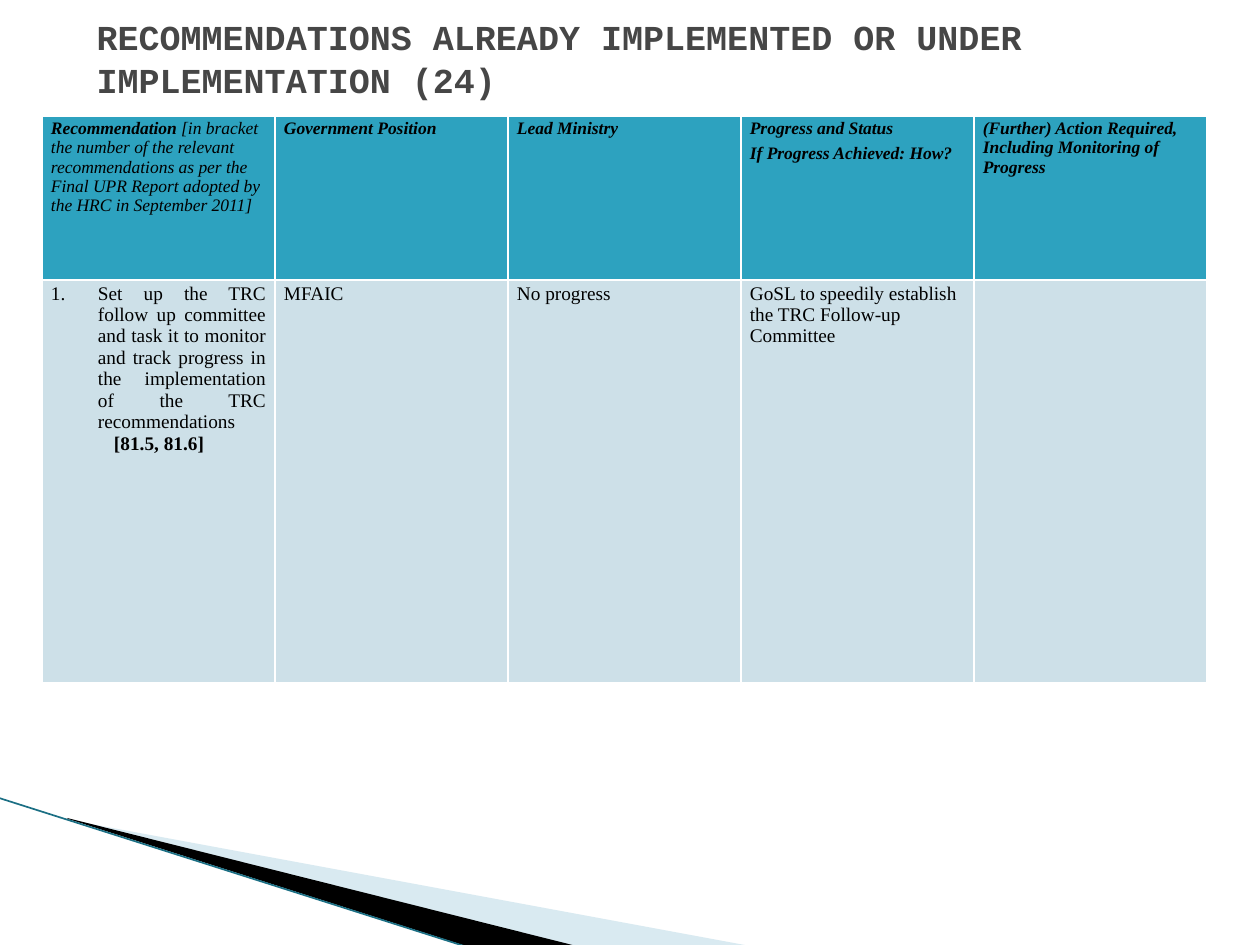
from dataclasses import dataclass

from lxml.etree import SubElement
from pptx import Presentation
from pptx.dml.color import RGBColor
from pptx.enum.shapes import MSO_CONNECTOR as Connector
from pptx.enum.text import MSO_ANCHOR as Anchor, MSO_AUTO_SIZE as AutoSize, PP_ALIGN as Align
from pptx.oxml.ns import qn
from pptx.util import Pt

PX = 7257


@dataclass(frozen=True)
class Theme:
    title_font: str = "Courier New"
    body_font: str = "Times New Roman"
    title_size: int = 20
    header_size: int = 10
    body_size: int = 11
    title: str = "464646"
    ink: str = "000000"
    header: str = "2DA2BF"
    body: str = "CDE0E8"
    border: str = "FFFFFF"
    pale: str = "A0CBDC"
    edge: str = "1B6F84"


THEME = Theme()
TITLE = "RECOMMENDATIONS ALREADY IMPLEMENTED OR UNDER IMPLEMENTATION (24)"
HEADERS = [
    [[("Recommendation ", "bi"),
      ("[in bracket the number of the relevant recommendations as per the "
       "Final UPR Report adopted by the HRC in September 2011]", "i")]],
    [[("Government Position", "bi")]],
    [[("Lead Ministry", "bi")]],
    [[("Progress and Status", "bi")], [("If Progress Achieved: How?", "bi")]],
    [[("(Further) Action Required, Including Monitoring of Progress", "bi")]],
]
ANSWERS = [
    [[("Set up the TRC follow up committee and task it to monitor and track "
       "progress in the implementation of the TRC recommendations", "")],
     [("[81.5, 81.6]", "b")]],
    [[("MFAIC", "")]],
    [[("No progress", "")]],
    [[("GoSL to speedily establish the TRC Follow-up Committee", "")]],
    [],
]
ROWS = [
    (HEADERS, 164, THEME.header, THEME.header_size),
    (ANSWERS, 403, THEME.body, THEME.body_size),
]
TABLE_LEFT, TABLE_TOP, COLUMN_WIDTH = 42, 116, 233
FIRST_SPACED_COLUMN = 2
WEDGES = [
    ([(69, 820), (750, 946), (575, 946), (69, 819)], THEME.pale, 40),
    ([(67, 818), (576, 946), (469, 947), (68, 819)], THEME.ink, 100),
]
EDGE = (-1, 798, 467, 947)


def px(*values):
    return [round(value * PX) for value in values]


def rgb(code):
    return RGBColor.from_string(code)


def format_span(span, name, size, color, style):
    font = span.font
    font.name, font.size = name, Pt(size)
    font.bold, font.italic = "b" in style, "i" in style
    font.color.rgb = rgb(color)


def add_wedge(page, points, color, opacity):
    builder = page.shapes.build_freeform(*points[0], scale=PX)
    builder.add_line_segments(points[1:], close=True)
    wedge = builder.convert_to_shape()
    wedge.shadow.inherit = False
    wedge.fill.solid()
    wedge.fill.fore_color.rgb = rgb(color)
    wedge.line.fill.background()
    if opacity < 100:
        tint = wedge._element.spPr.find(f"{qn('a:solidFill')}/{qn('a:srgbClr')}")
        SubElement(tint, qn("a:alpha"), val=str(opacity * 1000))


def add_edge(page):
    line = page.shapes.add_connector(Connector.STRAIGHT, *px(*EDGE))
    line.line.color.rgb = rgb(THEME.edge)
    line.line.width = Pt(0.95)
    SubElement(line._element.spPr, qn("a:effectLst"))


def set_borders(cell):
    properties = cell._tc.get_or_add_tcPr()
    for index, side in enumerate(("lnL", "lnR", "lnT", "lnB")):
        border = properties.makeelement(qn(f"a:{side}"), {"w": str(Pt(1))})
        fill = SubElement(border, qn("a:solidFill"))
        SubElement(fill, qn("a:srgbClr"), val=THEME.border)
        properties.insert(index, border)


def fill_cell(cell, paragraphs, color, size, space):
    cell.fill.solid()
    cell.fill.fore_color.rgb = rgb(color)
    set_borders(cell)
    cell.margin_left, cell.margin_top, cell.margin_right, cell.margin_bottom = px(9, 3, 9, 5)
    frame = cell.text_frame
    for index, spans in enumerate(paragraphs):
        para = frame.add_paragraph() if index else frame.paragraphs[0]
        para.space_after = Pt(space)
        for text, style in spans:
            span = para.add_run()
            span.text = text
            format_span(span, THEME.body_font, size, THEME.ink, style)


def number_recommendation(cell):
    numbered, reference = cell.text_frame.paragraphs
    numbered.alignment = reference.alignment = Align.JUSTIFY
    hanging, indent = px(47, 63)
    properties = numbered._p.get_or_add_pPr()
    properties.set("marL", str(hanging))
    properties.set("indent", str(-hanging))
    SubElement(properties, qn("a:buFont"), typeface="+mj-lt")
    SubElement(properties, qn("a:buAutoNum"), type="arabicPeriod")
    reference._p.get_or_add_pPr().set("marL", str(indent))


def add_recommendations(page):
    width = COLUMN_WIDTH * len(HEADERS)
    height = sum(row[1] for row in ROWS)
    frame = page.shapes.add_table(len(ROWS), len(HEADERS),
                                  *px(TABLE_LEFT, TABLE_TOP, width, height))
    table = frame.table
    for column in table.columns:
        column.width = COLUMN_WIDTH * PX
    for row, (cells, row_height, color, size) in enumerate(ROWS):
        table.rows[row].height = row_height * PX
        for column, paragraphs in enumerate(cells):
            space = 3 if column >= FIRST_SPACED_COLUMN else 0
            fill_cell(table.cell(row, column), paragraphs, color, size, space)
    number_recommendation(table.cell(1, 0))


def set_title(page):
    title = page.shapes.title
    title.left, title.top, title.width, title.height = px(84, 0, 1134, 116)
    frame = title.text_frame
    frame.text = TITLE
    frame.word_wrap = True
    frame.auto_size = AutoSize.NONE
    frame.vertical_anchor = Anchor.MIDDLE
    para = frame.paragraphs[0]
    para.alignment = Align.LEFT
    format_span(para.runs[0], THEME.title_font, THEME.title_size, THEME.title, "b")


def main():
    deck = Presentation()
    deck.slide_width, deck.slide_height = px(1260, 945)
    page = deck.slides.add_slide(deck.slide_layouts[5])
    for points, color, opacity in WEDGES:
        add_wedge(page, points, color, opacity)
    add_edge(page)
    add_recommendations(page)
    set_title(page)
    deck.save("out.pptx")


if __name__ == "__main__":
    main()
